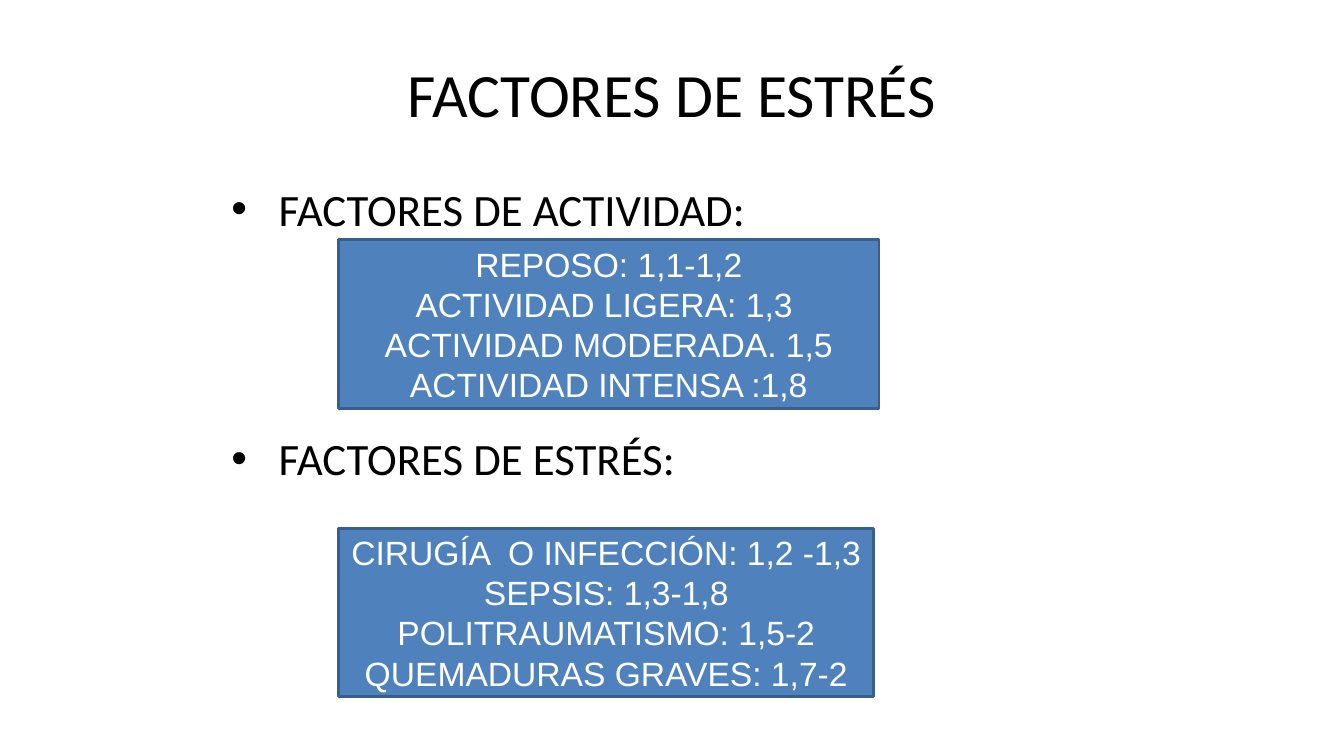
from dataclasses import dataclass

from lxml.etree import SubElement
from pptx import Presentation
from pptx.dml.color import RGBColor
from pptx.enum.shapes import MSO_SHAPE as Shape
from pptx.enum.text import MSO_ANCHOR as Anchor, PP_ALIGN as Align
from pptx.oxml.ns import qn
from pptx.util import Inches, Pt

SLIDE_WIDTH, SLIDE_HEIGHT = Inches(13.33), Inches(7.5)
COLUMNS, ROWS = 40, 30
TEXT_LEFT, TEXT_SPAN = 6.5, 27
FACTOR_LEFT, FACTOR_HEIGHT = 10.08, 6.68

ACTIVITY_FACTORS = [
    "REPOSO: 1,1-1,2",
    "ACTIVIDAD LIGERA: 1,3 ",
    "ACTIVIDAD MODERADA. 1,5",
    "ACTIVIDAD INTENSA :1,8",
]
STRESS_FACTORS = [
    "CIRUGÍA  O INFECCIÓN: 1,2 -1,3",
    "SEPSIS: 1,3-1,8",
    "POLITRAUMATISMO: 1,5-2",
    "QUEMADURAS GRAVES: 1,7-2",
]


@dataclass(frozen=True)
class Theme:
    """Colours, typefaces and type sizes of the slide."""

    ink: RGBColor = RGBColor(0, 0, 0)
    paper: RGBColor = RGBColor(255, 255, 255)
    panel: RGBColor = RGBColor.from_string("4F81BD")
    border: RGBColor = RGBColor.from_string("395E89")
    heading_face: str = "Calibri"
    factor_face: str = "Arial"
    title_size: int = Pt(44)
    heading_size: int = Pt(32)
    factor_size: int = Pt(24)


THEME = Theme()


def place(left, top, width, height):
    """Turn grid columns and rows into slide lengths."""
    column, row = SLIDE_WIDTH / COLUMNS, SLIDE_HEIGHT / ROWS
    return [round(n) for n in (left * column, top * row, width * column, height * row)]


def apply(target, formats):
    """Set each named attribute on the target."""
    for name, value in formats.items():
        setattr(target, name, value)


def write(frame, lines, face, size, colour, layout):
    """Fill a text frame with equally formatted paragraphs."""
    frame.word_wrap = True
    frame.text = "\n".join(lines)
    for paragraph in frame.paragraphs:
        apply(paragraph, layout)
        apply(paragraph.font, {"name": face, "size": size})
        paragraph.font.color.rgb = colour


def add_title(slide, title):
    """Add the centred slide title."""
    heading = slide.shapes.add_textbox(*place(TEXT_LEFT, 1.2, TEXT_SPAN, 5))
    heading.text_frame.vertical_anchor = Anchor.MIDDLE
    write(heading.text_frame, [title], THEME.heading_face, THEME.title_size,
          THEME.ink, {"alignment": Align.CENTER})


def add_headings(slide, headings, gap):
    """Add bulleted headings separated by a gap for their factors."""
    outline = slide.shapes.add_textbox(*place(TEXT_LEFT, 7, TEXT_SPAN, 19.8))
    frame = outline.text_frame
    frame.text = "\n".join(headings)
    for paragraph in frame.paragraphs:
        properties = paragraph._p.get_or_add_pPr()
        apply_indent = {"marL": Inches(0.5), "indent": Inches(-0.47)}
        for name, value in apply_indent.items():
            properties.set(name, str(value))
        SubElement(properties, qn("a:buFont"), typeface="Arial")
        SubElement(properties, qn("a:buChar"), char="•")
        apply(paragraph.font, {"name": THEME.heading_face, "size": THEME.heading_size})
        paragraph.font.color.rgb = THEME.ink
    for paragraph in frame.paragraphs[1:]:
        paragraph.space_before = gap
    frame.word_wrap = True


def add_factors(slide, factors, top, width):
    """Add a panel listing one group of factors."""
    panel = slide.shapes.add_shape(
        Shape.RECTANGLE, *place(FACTOR_LEFT, top, width, FACTOR_HEIGHT))
    panel.shadow.inherit = False
    panel.fill.solid()
    panel.fill.fore_color.rgb = THEME.panel
    panel.line.color.rgb = THEME.border
    panel.line.width = Pt(2)
    panel.text_frame.vertical_anchor = Anchor.MIDDLE
    write(panel.text_frame, factors, THEME.factor_face, THEME.factor_size,
          THEME.paper, {"alignment": Align.CENTER})


def main():
    """Build and save the stress factors slide."""
    deck = Presentation()
    apply(deck, {"slide_width": SLIDE_WIDTH, "slide_height": SLIDE_HEIGHT})
    slide = deck.slides.add_slide(deck.slide_layouts[6])
    add_title(slide, "FACTORES DE ESTRÉS")
    add_headings(slide, ["FACTORES DE ACTIVIDAD:", "FACTORES DE ESTRÉS:"], Pt(140))
    add_factors(slide, ACTIVITY_FACTORS, 9.52, 16.08)
    add_factors(slide, STRESS_FACTORS, 20.96, 15.93)
    deck.save("out.pptx")


if __name__ == "__main__":
    main()
